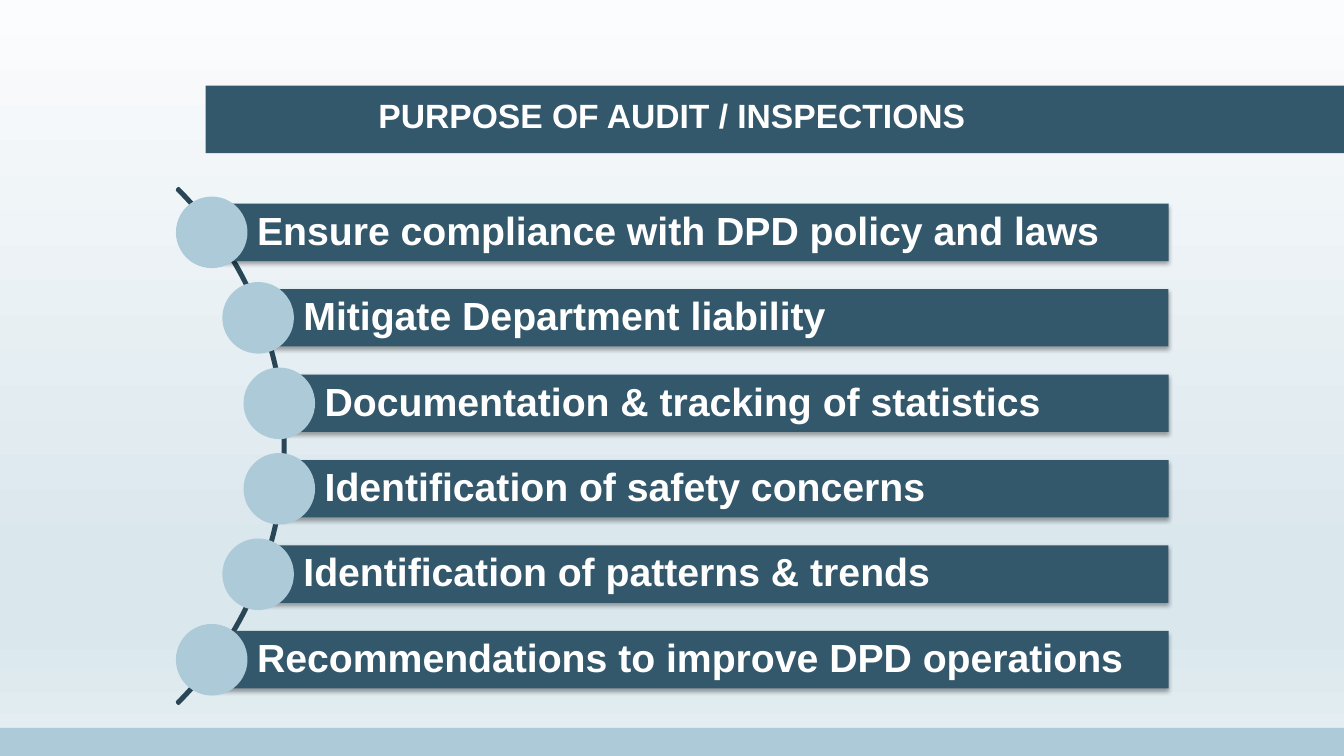
from lxml import etree
from pptx import Presentation
from pptx.dml.color import RGBColor
from pptx.enum.shapes import MSO_SHAPE
from pptx.enum.text import MSO_ANCHOR, PP_ALIGN
from pptx.oxml.ns import qn
from pptx.util import Inches, Pt

RECT, OVAL, ARC = MSO_SHAPE.RECTANGLE, MSO_SHAPE.OVAL, MSO_SHAPE.BLOCK_ARC
MIDDLE = MSO_ANCHOR.MIDDLE
LEFT, CENTER = PP_ALIGN.LEFT, PP_ALIGN.CENTER
DARK, PALE, EDGE, WHITE = "33576B", "ACCAD8", "294656", "FFFFFF"


def add(kind, box, fill=None):
    shape = slide.shapes.add_shape(kind, *map(Inches, box))
    shape.shadow.inherit = False
    shape.line.fill.background()
    if fill:
        shape.fill.solid()
        shape.fill.fore_color.rgb = RGBColor.from_string(fill)
    else:
        shape.fill.background()
    return shape


def write(shape, text, size, align, pads):
    frame = shape.text_frame
    frame.text = text
    look = {"word_wrap": True, "vertical_anchor": MIDDLE}
    sides = ("left", "top", "right", "bottom")
    look.update({f"margin_{s}": Inches(p) for s, p in zip(sides, pads)})
    for name, value in look.items():
        setattr(frame, name, value)
    para = frame.paragraphs[0]
    para.alignment = align
    para.line_spacing = 0.9
    for name, value in {"name": "Arial", "size": Pt(size), "bold": True}.items():
        setattr(para.font, name, value)
    para.font.color.rgb = RGBColor.from_string(WHITE)


deck = Presentation()
deck.slide_width, deck.slide_height = Inches(13.33), Inches(7.5)
slide = deck.slides.add_slide(deck.slide_layouts[5])

# Background gradient, top to bottom
back = slide.background.fill
back.gradient()
back.gradient_angle = 270
stops = next(slide.element.iter(qn("a:gsLst")))
for stop in list(stops):
    stops.remove(stop)
for pos, tint in ((0, "FBFCFD"), (74, "DAE7ED"), (83, "DAE7ED"), (100, "E6EFF3")):
    stop = etree.SubElement(stops, qn("a:gs"), pos=str(pos * 1000))
    etree.SubElement(stop, qn("a:srgbClr"), val=tint)

# Title band and footer band
add(RECT, (2.04, 0.85, 11.29, 0.67), DARK)
add(RECT, (0, 7.22, 13.33, 0.28), PALE)

# Title, brought in front of its band
title = slide.shapes.title
place = {"left": 0, "top": 0.83, "width": 13.33, "height": 0.67}
for name, value in place.items():
    setattr(title, name, Inches(value))
write(title, "PURPOSE OF AUDIT / INSPECTIONS", 24, CENTER, (0, 0, 0, 0))
slide.shapes.element.append(title.element)

# Curve behind the list
arc = add(ARC, (-4.4, 0.81, 7.23, 7.23))
for i, value in enumerate((189, 27, 0.003)):
    arc.adjustments[i] = value
arc.line.color.rgb = RGBColor.from_string(EDGE)
arc.line.width = Pt(2)

# Bars with a dot centred on each left end
items = (
    (2.1, "Ensure compliance with DPD policy and laws"),
    (2.56, "Mitigate Department liability"),
    (2.77, "Documentation & tracking of statistics"),
    (2.77, "Identification of safety concerns"),
    (2.56, "Identification of patterns & trends"),
    (2.1, "Recommendations to improve DPD operations"),
)
TOP, STEP, HIGH, END, DOT = 2.02, 0.848, 0.57, 11.59, 0.71
for i, (x, text) in enumerate(items):
    y = TOP + i * STEP
    bar = add(RECT, (x, y, END - x, HIGH), DARK)
    write(bar, text, 28, LEFT, (0.45, 0.08, 0.08, 0.08))
    glow = etree.SubElement(
        bar.element.spPr.find(qn("a:effectLst")), qn("a:outerShdw"),
        blurRad=str(Pt(3.1)), dist=str(Pt(1.8)), dir="5400000", rotWithShape="0")
    shade = etree.SubElement(glow, qn("a:srgbClr"), val="000000")
    etree.SubElement(shade, qn("a:alpha"), val="35000")
    add(OVAL, (x - DOT / 2, y + (HIGH - DOT) / 2, DOT, DOT), PALE)

deck.save("out.pptx")
